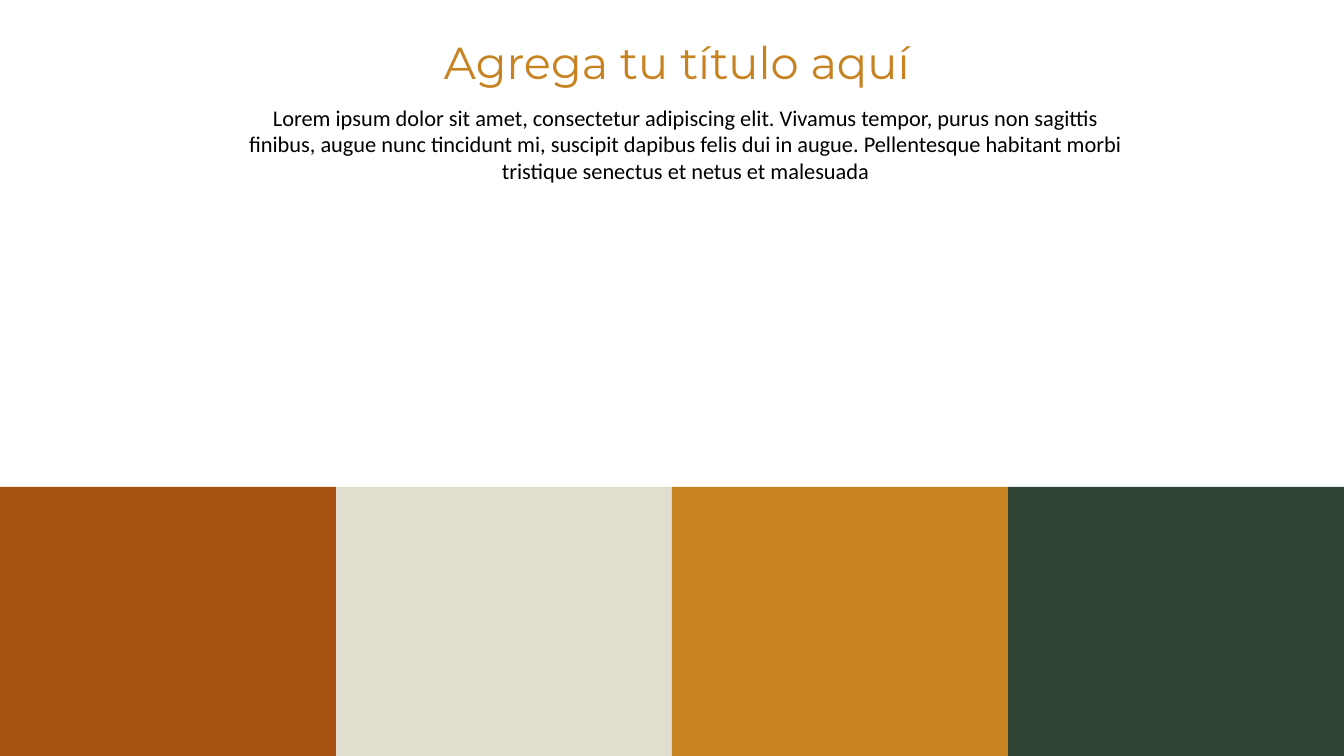
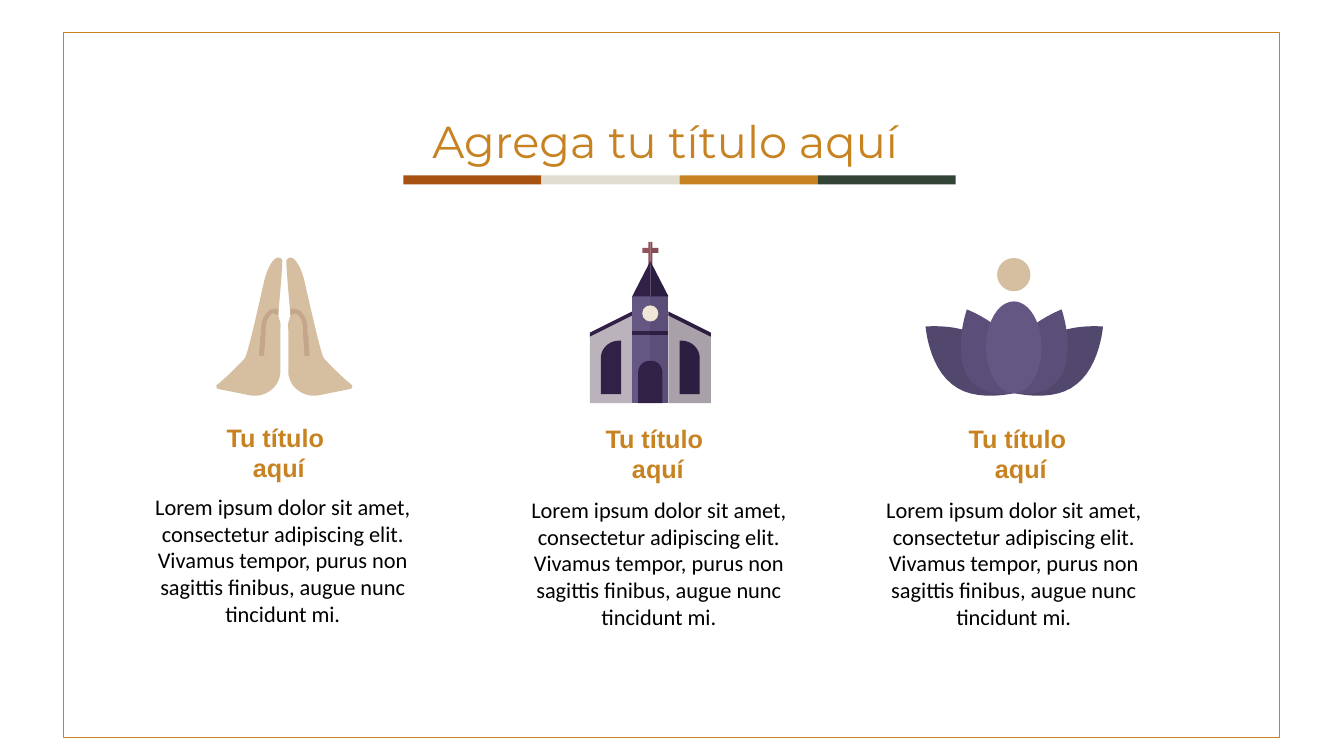
"""Build two slides: a colour band opener and three columns with icons."""
from pptx import Presentation
from pptx import util as u
from pptx.dml.color import RGBColor
from pptx.enum import shapes, text

GOLD, BLACK = "C78322", "000000"
BAND = ["A75211", "E1DECF", GOLD, "324436"]
TITLE = ("Montserrat", 32, GOLD, False)
HEADING = ("Arial", 18, GOLD, True)
BODY = ("Calibri", 16, BLACK, False)

TITLE_TEXT = "Agrega tu título aquí"
INTRO = ("Lorem ipsum dolor sit amet, consectetur adipiscing elit. Vivamus tempor, "
         "purus non sagittis finibus, augue nunc tincidunt mi, suscipit dapibus felis "
         "dui in augue. Pellentesque habitant morbi tristique senectus et netus et malesuada")
COLUMN_HEADING = ["Tu título ", "aquí"]
COLUMN_TEXT = ("Lorem ipsum dolor sit amet, consectetur adipiscing elit. Vivamus tempor, "
               "purus non sagittis finibus, augue nunc tincidunt mi.")

SKIN, SHADE = "D6BFA0", "C3A68C"
PLUM, NIGHT, DEEP = "655784", "312147", "2C1E40"
VIOLET, DUSK = "5B4E78", "52476D"

ICON_TOP = 2.4
HANDS = {
    "outlines": [
        ((SKIN, SKIN), [
            (11, 145), (7, 141, 5, 137, 4, 131), (4, 89), (4, 85, 3, 81, 5, 77),
            (5, 76, 5, 75, 6, 74), (6, 72), (4, 49, 2, 26, 2, 20), (2, 18),
            (8, 9, 17, 25, 20, 39), (23, 52, 36, 111, 39, 115),
            (41, 118, 58, 135, 67, 142), (68, 143, 67, 146, 65, 146),
            (35, 152), (26, 154, 17, 151, 11, 145)]),
        ((SHADE, SHADE), [
            (8, 72), (8, 72, 7, 73, 6, 73), (6, 67), (8, 66, 10, 66, 12, 67),
            (14, 67, 16, 68, 16, 69), (23, 75, 23, 83, 23, 90),
            (23, 92, 24, 94, 24, 95), (24, 101, 25, 107, 25, 113), (20, 113),
            (20, 108, 19, 102, 19, 96), (18, 89, 20, 79, 14, 73),
            (13, 72, 12, 71, 12, 71), (11, 71, 9, 71, 8, 72)]),
    ],
    "ovals": [],
}
CHURCH = {
    "outlines": [
        (("A8A1A9", "BAB3BB"), [(18, 71), (60, 92), (60, 160), (18, 160)]),
        ((DEEP, NIGHT), [(18, 69), (60, 90), (60, 94), (18, 73)]),
        ((DEEP, NIGHT), [(29, 151), (49, 151), (49, 115),
                         (49, 106, 41, 98, 31, 98), (29, 98)]),
        ((VIOLET, PLUM), [(0, 54), (18, 54), (18, 160), (0, 160)]),
        (("854C54", "94545D"), [(0, 0), (2, 0), (2, 6), (8, 6), (8, 11),
                                (2, 11), (2, 23), (0, 23)]),
        ((DEEP, NIGHT), [(0, 19), (18, 54), (0, 54)]),
        ((DEEP, NIGHT), [(0, 88), (18, 88), (18, 92), (0, 92)]),
        ((NIGHT,), [(-12, 160), (-12, 130), (-12, 123, -7, 118, -1, 118), (1, 118),
                    (7, 118, 12, 123, 12, 130), (12, 160)]),
    ],
    "ovals": [("F1E7D7", -8, 63, 16, 16)],
}
LOTUS = {
    "outlines": [
        ((DUSK, DUSK), [
            (62, 141), (40, 160, 0, 150, 0, 150), (0, 150, 5, 118, 27, 99),
            (49, 80, 88, 84, 88, 84), (88, 84, 85, 123, 62, 141)]),
        ((VIOLET, VIOLET), [
            (48, 130), (36, 157, 0, 150, 0, 150), (0, 150, -15, 133, -2, 107),
            (10, 81, 47, 67, 47, 67), (47, 67, 60, 104, 48, 130)]),
    ],
    "ovals": [(PLUM, -28, 59, 55, 91), (SKIN, -17, 16, 33, 33)],
}
COLUMNS = [
    {"icon": HANDS, "axis": 2.82, "heading": (1.67, 4.14), "body": (1.14, 4.84)},
    {"icon": CHURCH, "axis": 6.45, "heading": (5.43, 4.15), "body": (4.87, 4.87)},
    {"icon": LOTUS, "axis": 10.06, "heading": (9.03, 4.15), "body": (8.39, 4.87)},
]


def length(inches):
    """Turn inches into a slide length."""
    return u.Cm(inches * 2.54)


def color(code):
    """Turn a hex string into a colour."""
    return RGBColor.from_string(code)


def paint(shape, fill=None, line=None):
    """Set the fill and line of a shape, and drop its shadow."""
    shape.shadow.inherit = False
    if fill:
        shape.fill.solid()
        shape.fill.fore_color.rgb = color(fill)
    else:
        shape.fill.background()
    if line:
        shape.line.color.rgb = color(line)
        shape.line.width = u.Pt(1)
    else:
        shape.line.fill.background()
    return shape


def add_preset(page, kind, frame, fill=None, line=None):
    """Add a painted preset shape."""
    return paint(page.shapes.add_shape(kind, *map(length, frame)), fill, line)


def add_text(page, frame, lines, style):
    """Add a centred text box with one paragraph per line."""
    font, size, ink, bold = style
    box = page.shapes.add_textbox(*map(length, frame)).text_frame
    box.word_wrap = True
    box.auto_size = text.MSO_AUTO_SIZE.SHAPE_TO_FIT_TEXT
    for index, line in enumerate(lines):
        para = box.paragraphs[0] if index == 0 else box.add_paragraph()
        para.alignment = text.PP_ALIGN.CENTER
        span = para.add_run()
        span.text = line
        span.font.name, span.font.size, span.font.bold = font, u.Pt(size), bold
        span.font.color.rgb = color(ink)


def add_band(page, left, top, width, height):
    """Add the row of palette blocks."""
    step = width / len(BAND)
    for index, fill in enumerate(BAND):
        frame = (left + index * step, top, step, height)
        add_preset(page, shapes.MSO_SHAPE.RECTANGLE, frame, fill)


def flatten(outline, steps=12):
    """Turn corners and cubic curves into a list of points."""
    points = [outline[0]]
    for segment in outline[1:]:
        if len(segment) == 2:
            points.append(segment)
            continue
        ends = [points[-1], segment[:2], segment[2:4], segment[4:]]
        for step in range(1, steps + 1):
            t = step / steps
            weights = ((1 - t) ** 3, 3 * t * (1 - t) ** 2, 3 * t * t * (1 - t), t ** 3)
            points.append(tuple(sum(w * end[i] for w, end in zip(weights, ends))
                                for i in (0, 1)))
    return points


def add_icon(page, icon, axis):
    """Add a grouped icon around its axis; a second colour mirrors an outline."""
    parts = []
    for fills, outline in icon["outlines"]:
        for side, fill in zip((1, -1), fills):
            points = [(length(axis + side * x / 100), length(ICON_TOP + y / 100))
                      for x, y in flatten(outline)]
            builder = page.shapes.build_freeform(*points[0])
            builder.add_line_segments(points[1:], close=True)
            parts.append(paint(builder.convert_to_shape(), fill))
    for fill, x, y, width, height in icon["ovals"]:
        frame = (axis + x / 100, ICON_TOP + y / 100, width / 100, height / 100)
        parts.append(add_preset(page, shapes.MSO_SHAPE.OVAL, frame, fill))
    page.shapes.add_group_shape(parts)


def build_opener(page):
    """Fill the slide with the wide colour band."""
    add_band(page, 0, 4.83, 13.33, 2.67)
    add_text(page, (3.73, 0.3, 5.97, 0.64), [TITLE_TEXT], TITLE)
    add_text(page, (2.33, 0.98, 8.94, 0.91), [INTRO], BODY)


def build_columns(page):
    """Fill the slide with the framed three columns."""
    add_preset(page, shapes.MSO_SHAPE.RECTANGLE, (0.63, 0.32, 12.06, 7), line=GOLD)
    add_text(page, (3.15, 1.08, 6.9, 0.64), [TITLE_TEXT], TITLE)
    add_band(page, 4, 1.74, 5.48, 0.09)
    for column in COLUMNS:
        add_icon(page, column["icon"], column["axis"])
        add_text(page, (*column["heading"], 2.19, 0.71), COLUMN_HEADING, HEADING)
        add_text(page, (*column["body"], 3.33, 1.45), [COLUMN_TEXT], BODY)


def main():
    """Build and save the deck."""
    deck = Presentation()
    deck.slide_width, deck.slide_height = length(13.33), length(7.5)
    for build in (build_opener, build_columns):
        build(deck.slides.add_slide(deck.slide_layouts[6]))
    deck.save("out.pptx")


if __name__ == "__main__":
    main()
